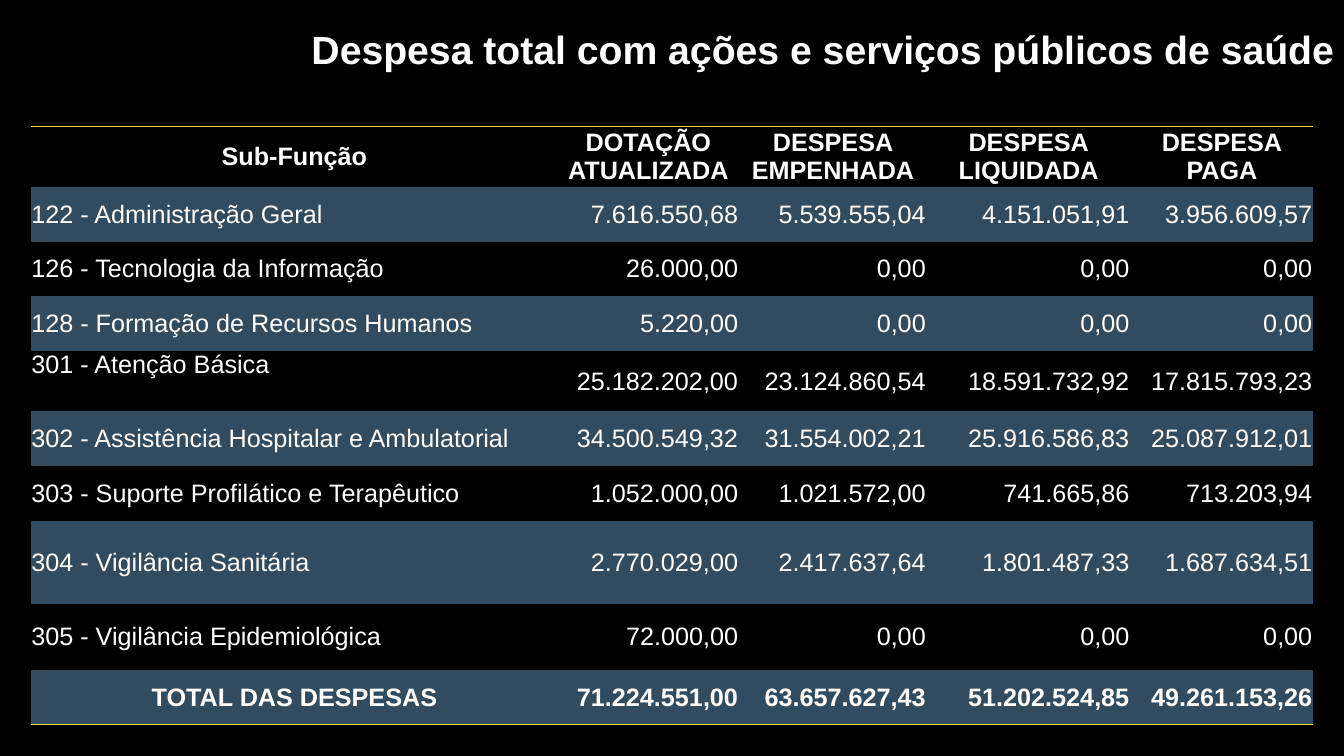
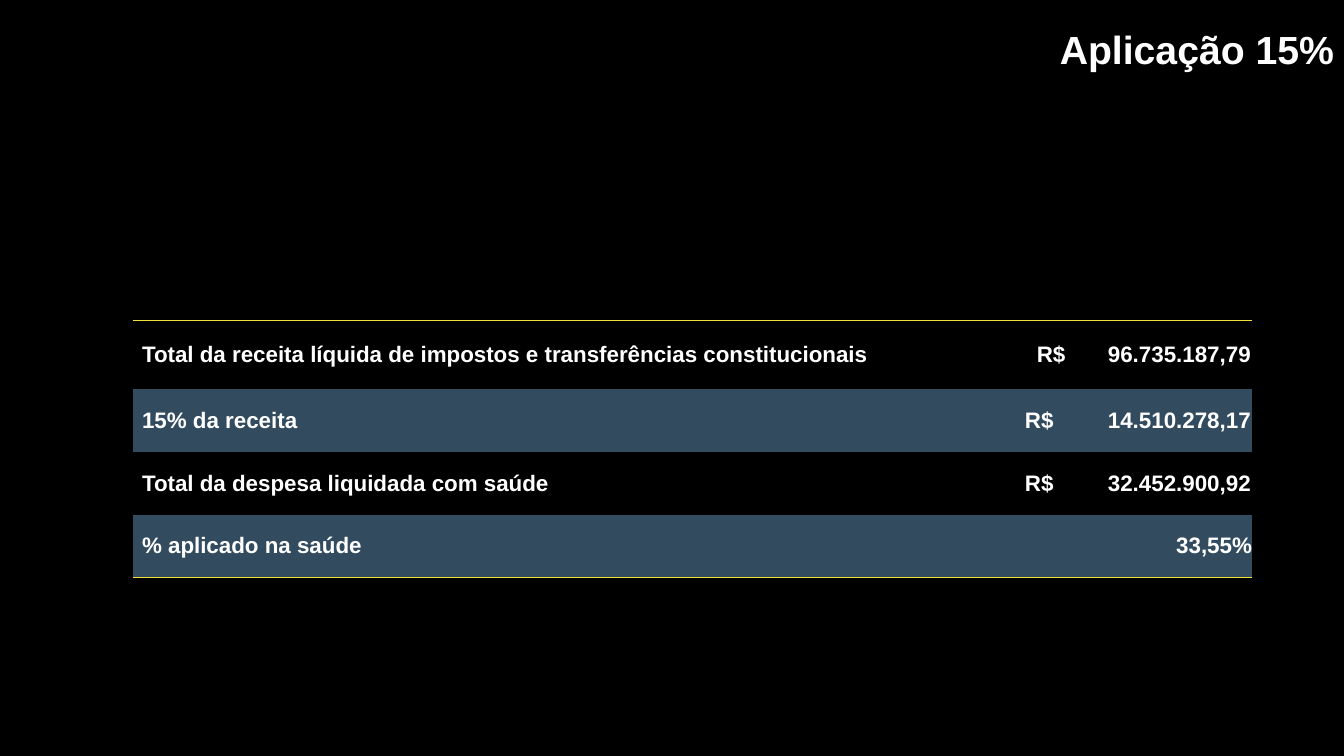
from lxml import etree
from pptx import Presentation
from pptx.dml.color import RGBColor
from pptx.enum.text import MSO_ANCHOR as ANCHOR, PP_ALIGN as ALIGN
from pptx.oxml.ns import qn
from pptx.util import Cm, Pt

COLORS = {"bg": "000000", "text": "FFFFFF", "band": "324B5F", "rule": "F4DE3A"}
FONT = "Arial"
NO_STYLE = "{2D5ABB26-0587-4C30-8999-92F81FD0307C}"


def rgb(name):
    return RGBColor.from_string(COLORS[name])


class Deck:
    """Holds the shared style and the current slide."""

    def __init__(self):
        self.prs = Presentation()
        self.prs.slide_width, self.prs.slide_height = Cm(33.87), Cm(19.05)
        fill = self.prs.slide_master.background.fill
        fill.solid()
        fill.fore_color.rgb = rgb("bg")
        self.s = None

    def slide(self, title):
        self.s = self.prs.slides.add_slide(self.prs.slide_layouts[5])
        sp = self.s.shapes.title
        sp.left, sp.top, sp.width, sp.height = Cm(7.09), Cm(0.51), Cm(26.78), Cm(1.45)
        tf = sp.text_frame
        tf.word_wrap = True
        tf.vertical_anchor = ANCHOR.TOP
        self.run(tf.paragraphs[0], title, 28, True, ALIGN.RIGHT)

    def run(self, p, text, size, bold=False, align=ALIGN.LEFT):
        p.alignment = align
        r = p.add_run()
        r.text = text
        r.font.name, r.font.size, r.font.bold = FONT, Pt(size), bold
        r.font.color.rgb = rgb("text")

    def table(self, left, top, cols, rows):
        """Banded table with a rule above the first row and below the last."""
        frame = self.s.shapes.add_table(len(rows), len(cols), Cm(left), Cm(top),
                                        Cm(sum(cols)), Cm(sum(rows)))
        tbl = frame.table
        tbl.first_row = tbl.horz_banding = False
        frame._element.find(".//" + qn("a:tableStyleId")).text = NO_STYLE
        for col, width in zip(tbl.columns, cols):
            col.width = Cm(width)
        for i, (row, height) in enumerate(zip(tbl.rows, rows)):
            row.height = Cm(height)
            for cell in row.cells:
                if i % 2:
                    cell.fill.solid()
                    cell.fill.fore_color.rgb = rgb("band")
                else:
                    cell.fill.background()
                if i == 0:
                    self.rule(cell, "a:lnT")
                if i == len(rows) - 1:
                    self.rule(cell, "a:lnB")
        return tbl

    def rule(self, cell, side):
        ln = etree.Element(qn(side), w=str(Pt(1)))
        solid = etree.SubElement(ln, qn("a:solidFill"))
        etree.SubElement(solid, qn("a:srgbClr"), val=COLORS["rule"])
        cell._tc.get_or_add_tcPr().insert(0, ln)

    def cell(self, cell, text, size, bold=False, align=ALIGN.LEFT,
             indent=0, right=0, tab=None, anchor=ANCHOR.MIDDLE):
        cell.margin_left, cell.margin_right = Cm(indent), Cm(right)
        cell.margin_top = cell.margin_bottom = 0
        cell.vertical_anchor = anchor
        tf = cell.text_frame
        for i, line in enumerate(text.split("\n")):
            p = tf.add_paragraph() if i else tf.paragraphs[0]
            if tab:
                tabs = etree.SubElement(p._p.get_or_add_pPr(), qn("a:tabLst"))
                etree.SubElement(tabs, qn("a:tab"), pos=str(Cm(tab)), algn="l")
            self.run(p, line, size, bold, align)


EXPENSES = [
    ("Sub-Função", "DOTAÇÃO\nATUALIZADA", "DESPESA\nEMPENHADA",
     "DESPESA\nLIQUIDADA", "DESPESA\nPAGA"),
    ("122 - Administração Geral", "7.616.550,68", "5.539.555,04", "4.151.051,91", "3.956.609,57"),
    ("126 - Tecnologia da Informação", "26.000,00", "0,00", "0,00", "0,00"),
    ("128 - Formação de Recursos Humanos", "5.220,00", "0,00", "0,00", "0,00"),
    ("301 - Atenção Básica", "25.182.202,00", "23.124.860,54", "18.591.732,92", "17.815.793,23"),
    ("302 - Assistência Hospitalar e Ambulatorial",
     "34.500.549,32", "31.554.002,21", "25.916.586,83", "25.087.912,01"),
    ("303 - Suporte Profilático e Terapêutico",
     "1.052.000,00", "1.021.572,00", "741.665,86", "713.203,94"),
    ("304 - Vigilância Sanitária", "2.770.029,00", "2.417.637,64", "1.801.487,33", "1.687.634,51"),
    ("305 - Vigilância Epidemiológica", "72.000,00", "0,00", "0,00", "0,00"),
    ("TOTAL DAS DESPESAS", "71.224.551,00", "63.657.627,43", "51.202.524,85", "49.261.153,26"),
]

# Label, amount, whether in reais, and where the currency sign starts (cm)
SHARE = [
    ("Total da receita líquida de impostos e transferências constitucionais",
     "96.735.187,79", 3.25),
    ("15% da receita", "14.510.278,17", 2.95),
    ("Total da despesa liquidada com saúde", "32.452.900,92", 2.95),
    ("% aplicado na saúde", "33,55%", None),
]
AMOUNT_START = 5.04


def expenses_slide(deck):
    deck.slide("Despesa total com ações e serviços públicos de saúde")
    tbl = deck.table(0.79, 3.18, [13.26, 4.58, 4.73, 5.13, 4.61],
                     [1.53, 1.38, 1.38, 1.38, 1.52, 1.38, 1.38, 2.09, 1.68, 1.37])
    last = len(EXPENSES) - 1
    for i, row in enumerate(EXPENSES):
        for j, text in enumerate(row):
            bold = i in (0, last)
            if i == 0 or (bold and j == 0):
                align = ALIGN.CENTER
            else:
                align = ALIGN.RIGHT if j else ALIGN.LEFT
            top = text.startswith("301")
            deck.cell(tbl.cell(i, j), text, 18, bold, align,
                      right=0.03 if align == ALIGN.RIGHT else 0,
                      anchor=ANCHOR.TOP if top else ANCHOR.MIDDLE)


def share_slide(deck):
    deck.slide("Aplicação 15%")
    tbl = deck.table(3.35, 8.07, [19.53, 8.67], [1.74, 1.58, 1.58, 1.58])
    for i, (label, amount, sign_start) in enumerate(SHARE):
        deck.cell(tbl.cell(i, 0), label, 16, True, indent=0.23)
        if sign_start:
            deck.cell(tbl.cell(i, 1), "R$\t" + amount, 16, True,
                      indent=sign_start, tab=AMOUNT_START - sign_start)
        else:
            deck.cell(tbl.cell(i, 1), amount, 16, True, ALIGN.RIGHT)


def main():
    deck = Deck()
    expenses_slide(deck)
    share_slide(deck)
    deck.prs.save("out.pptx")


if __name__ == "__main__":
    main()
